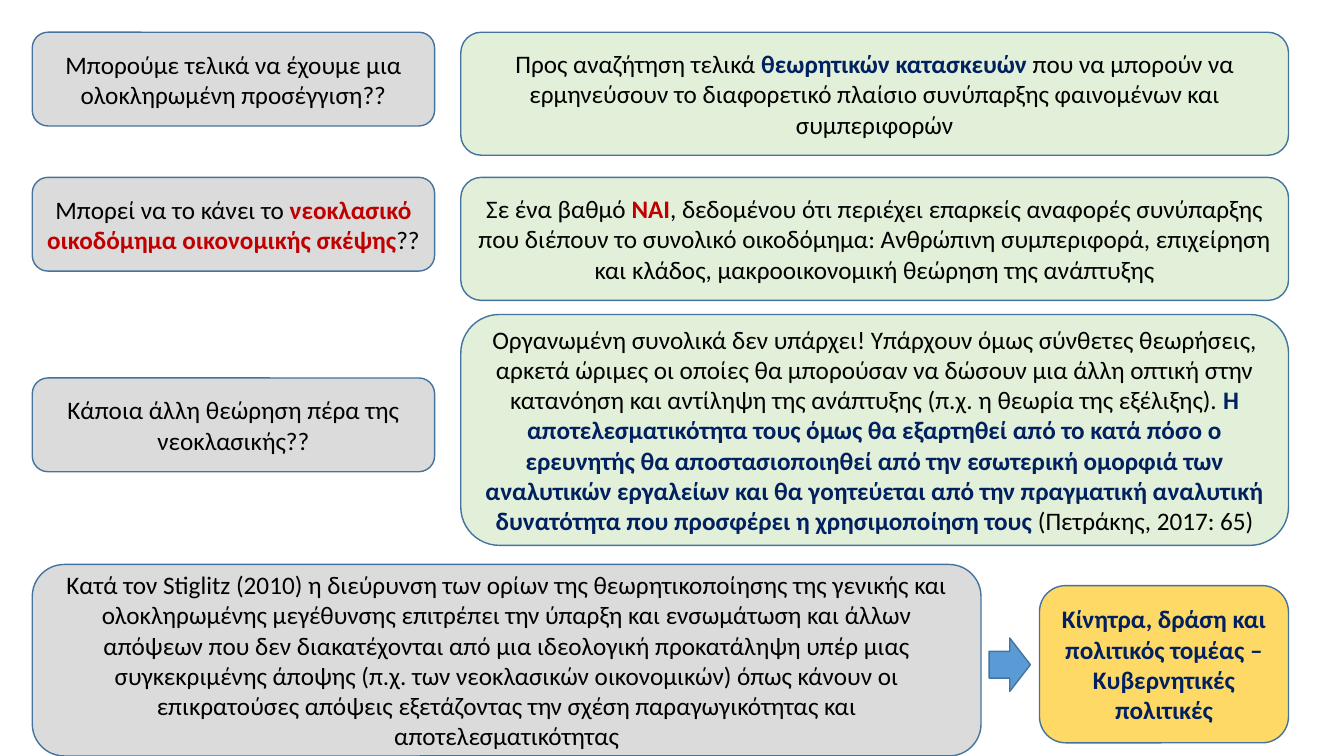
from pptx import Presentation
from pptx.dml.color import RGBColor
from pptx.enum.shapes import MSO_SHAPE
from pptx.enum.text import MSO_ANCHOR, PP_ALIGN
from pptx.util import Emu, Pt

PX = 9144  # 100 px to the inch
BLANK_LAYOUT = 6
ROUNDED = MSO_SHAPE.ROUNDED_RECTANGLE
ARROW = MSO_SHAPE.RIGHT_ARROW
MIDDLE = MSO_ANCHOR.MIDDLE
CENTER = PP_ALIGN.CENTER

BLACK = RGBColor(0x00, 0x00, 0x00)
NAVY = RGBColor(0x00, 0x20, 0x60)
RED = RGBColor(0xC0, 0x00, 0x00)
GREY = RGBColor(0xDB, 0xDB, 0xDB)
GREEN = RGBColor(0xE2, 0xF0, 0xD9)
GOLD = RGBColor(0xFF, 0xD9, 0x66)
BLUE = RGBColor(0x5B, 0x9B, 0xD5)
OUTLINE = RGBColor(0x43, 0x73, 0x9E)

LEFT, QUESTION_W, QUESTION_H = 32, 399, 93
ANSWER_X, ANSWER_W = 457, 821

# Each row: question top, question runs, answer top, answer height, answer runs
ROWS = [
    (32, [("Μπορούμε τελικά να έχουμε μια ολοκληρωμένη προσέγγιση??", BLACK)],
     32, 122,
     [("Προς αναζήτηση τελικά ", BLACK),
      ("θεωρητικών κατασκευών ", NAVY),
      ("που να μπορούν να ερμηνεύσουν το διαφορετικό πλαίσιο συνύπαρξης "
       "φαινομένων και συμπεριφορών", BLACK)]),
    (176, [("Μπορεί να το κάνει το ", BLACK),
           ("νεοκλασικό οικοδόμημα οικονομικής σκέψης", RED),
           ("??", BLACK)],
     176, 122,
     [("Σε ένα βαθμό ", BLACK),
      ("ΝΑΙ", RED),
      (", δεδομένου ότι περιέχει επαρκείς αναφορές συνύπαρξης που διέπουν το "
       "συνολικό οικοδόμημα: Ανθρώπινη συμπεριφορά, επιχείρηση και κλάδος, "
       "μακροοικονομική θεώρηση της ανάπτυξης", BLACK)]),
    (375, [("Κάποια άλλη θεώρηση πέρα της νεοκλασικής??", BLACK)],
     312, 229,
     [("Οργανωμένη συνολικά δεν υπάρχει! Υπάρχουν όμως σύνθετες θεωρήσεις, "
       "αρκετά ώριμες οι οποίες θα μπορούσαν να δώσουν μια άλλη οπτική στην "
       "κατανόηση και αντίληψη της ανάπτυξης (π.χ. η θεωρία της εξέλιξης). ",
       BLACK),
      ("Η αποτελεσματικότητα τους όμως θα εξαρτηθεί από το κατά πόσο ο "
       "ερευνητής θα αποστασιοποιηθεί από την εσωτερική ομορφιά των αναλυτικών "
       "εργαλείων και θα γοητεύεται από την πραγματική αναλυτική δυνατότητα "
       "που προσφέρει η χρησιμοποίηση τους", NAVY),
      (" (Πετράκης, 2017: 65)", BLACK)]),
]
STIGLITZ = [
    ("Κατά τον Stiglitz (2010) η διεύρυνση των ορίων της θεωρητικοποίησης της "
     "γενικής και ολοκληρωμένης μεγέθυνσης επιτρέπει την ύπαρξη και ενσωμάτωση "
     "και άλλων απόψεων που δεν διακατέχονται από μια ιδεολογική προκατάληψη "
     "υπέρ μιας συγκεκριμένης άποψης (π.χ. των νεοκλασικών οικονομικών) όπως "
     "κάνουν οι επικρατούσες απόψεις εξετάζοντας την σχέση παραγωγικότητας και "
     "αποτελεσματικότητας", BLACK)]
POLICY = [("Κίνητρα, δράση και πολιτικός τομέας – Κυβερνητικές πολιτικές", NAVY)]


def add_outlined_shape(s, kind, x, y, w, h, fill):
    sp = s.shapes.add_shape(kind, *(Emu(n * PX) for n in (x, y, w, h)))
    sp.shadow.inherit = False
    sp.fill.solid()
    sp.fill.fore_color.rgb = fill
    sp.line.color.rgb = OUTLINE
    sp.line.width = Pt(1)
    return sp


def add_text_box(s, x, y, w, h, fill, runs):
    """Add a rounded box; runs are (text, colour), bold unless black."""
    sp = add_outlined_shape(s, ROUNDED, x, y, w, h, fill)
    tf = sp.text_frame
    tf.word_wrap = True
    tf.vertical_anchor = MIDDLE
    p = tf.paragraphs[0]
    p.alignment = CENTER
    for text, color in runs:
        r = p.add_run()
        r.text = text
        r.font.name = "Calibri"
        r.font.size = Pt(18)
        r.font.bold = color != BLACK
        r.font.color.rgb = color


def main():
    prs = Presentation()
    prs.slide_width = Emu(1333 * PX)
    prs.slide_height = Emu(750 * PX)
    s = prs.slides.add_slide(prs.slide_layouts[BLANK_LAYOUT])

    for question_y, question, answer_y, answer_h, answer in ROWS:
        add_text_box(s, LEFT, question_y, QUESTION_W, QUESTION_H, GREY, question)
        add_text_box(s, ANSWER_X, answer_y, ANSWER_W, answer_h, GREEN, answer)

    add_text_box(s, LEFT, 560, 941, 190, GREY, STIGLITZ)
    add_text_box(s, 1031, 581, 247, 156, GOLD, POLICY)
    add_outlined_shape(s, ARROW, 981, 633, 41, 53, BLUE)

    prs.save("out.pptx")


if __name__ == "__main__":
    main()
